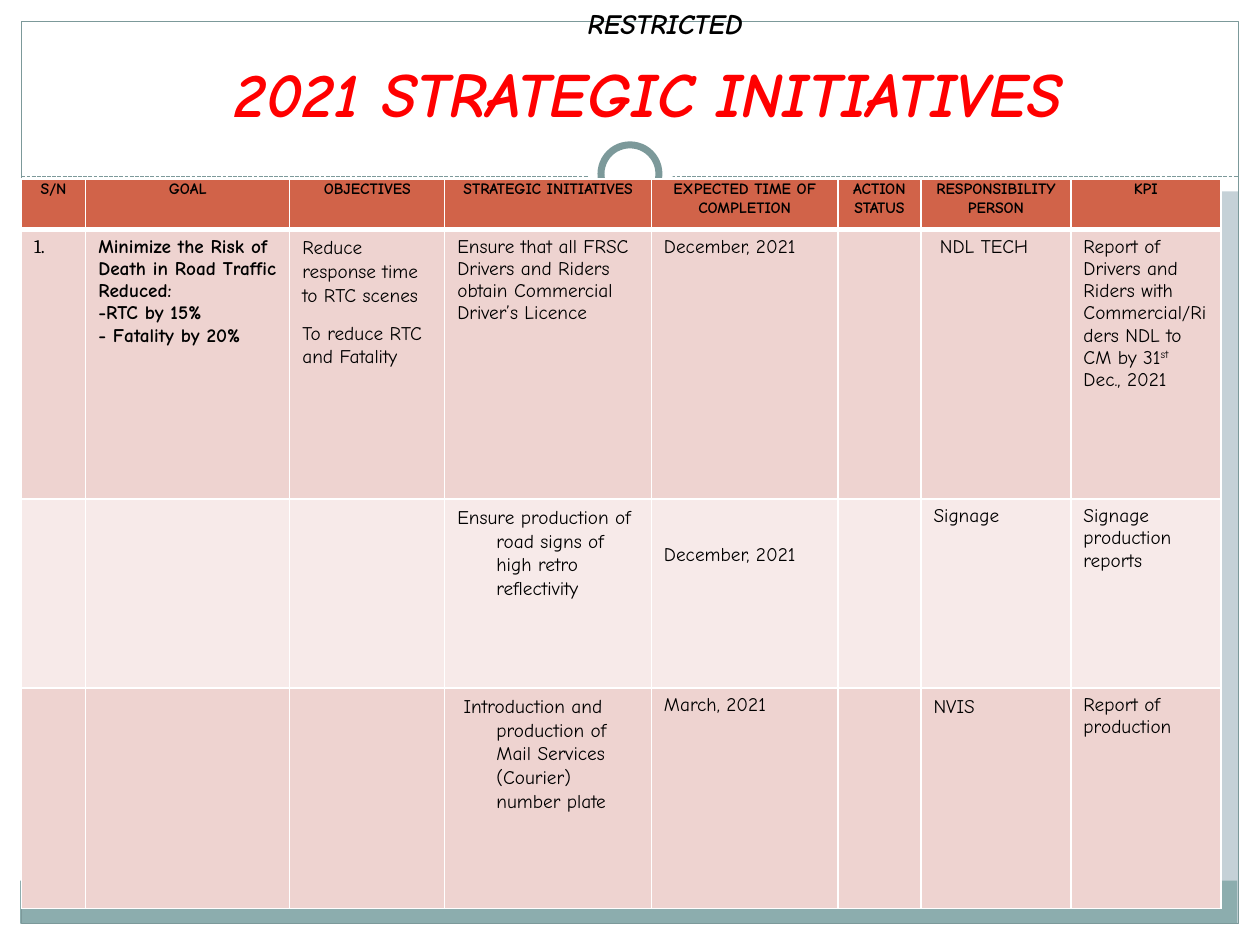
"""Build the 2021 strategic initiatives table slide."""
import pptx
import pptx.dml.color
import pptx.enum.dml
import pptx.enum.shapes
import pptx.enum.text
import pptx.oxml
import pptx.oxml.ns
import pptx.util

Inches = pptx.util.Inches
Pt = pptx.util.Pt
RGBColor = pptx.dml.color.RGBColor
Shape = pptx.enum.shapes.MSO_SHAPE
Align = pptx.enum.text.PP_ALIGN

WHITE = RGBColor(0xFF, 0xFF, 0xFF)
BLACK = RGBColor(0, 0, 0)
RED = RGBColor(0xFF, 0, 0)
BACKDROP = RGBColor(0xC5, 0xD1, 0xD7)
TEAL = RGBColor(0x8C, 0xAD, 0xAE)
FRAME = RGBColor(0x7C, 0x99, 0x9A)
HEADER = RGBColor(0xD1, 0x63, 0x49)
ROSE = RGBColor(0xEE, 0xD3, 0xD0)
PALE = RGBColor(0xF7, 0xEA, 0xE9)
FONT = "Comic Neue"

TITLE = "2021 STRATEGIC INITIATIVES"
MARKING = "RESTRICTED"
BANDS = [
    ((0, 7.33, 10, 0.17), WHITE),
    ((0, 0, 10, 1.52), WHITE),
    ((0, 0, 0.17, 7.5), WHITE),
    ((9.83, 0, 0.17, 7.5), WHITE),
    ((0.16, 6.99, 9.66, 0.34), TEAL),
]
COLUMN_WIDTHS = [0.51, 1.62, 1.23, 1.64, 1.48, 0.66, 1.19, 1.19]
ROW_HEIGHTS = [0.4, 2.14, 1.5, 1.75]
HEADINGS = [
    "S/N", "GOAL", "OBJECTIVES", "STRATEGIC INITIATIVES",
    "EXPECTED TIME OF COMPLETION", "ACTION STATUS",
    "RESPONSIBILITY PERSON", "KPI",
]
BODY = [
    [
        ["1."],
        ["Minimize the Risk of Death in Road Traffic", "Reduced:",
         "-RTC by 15%", "- Fatality by 20%"],
        ["Reduce response time to RTC scenes", "To reduce RTC and Fatality"],
        ["Ensure that all FRSC Drivers and Riders obtain Commercial Driver’s Licence"],
        ["December, 2021"],
        [],
        ["NDL TECH"],
        [("Report of Drivers and Riders with Commercial/Riders NDL to CM by 31",
          "st", " Dec., 2021")],
    ],
    [
        [], [], [],
        ["Ensure production of road signs of high retro reflectivity"],
        ["December, 2021"], [], ["Signage"], ["Signage production reports"],
    ],
    [
        [], [], [],
        ["Introduction and production of Mail Services (Courier) number plate"],
        ["March, 2021"], [], ["NVIS"], ["Report of production"],
    ],
]
SPACED_CELLS = {(1, 2), (2, 3), (2, 4), (3, 3), (3, 6)}
HANGING_INDENTS = {(2, 3): -0.31, (3, 3): -0.26}


def add_span(para, text, size, bold=False, italic=False, color=BLACK, font=FONT):
    span = para.add_run()
    span.text = text
    span.font.name = font
    span.font.size = Pt(size)
    span.font.bold = bold
    span.font.italic = italic
    span.font.color.rgb = color
    return span


def add_plain_shape(page, kind, place, fill=None, line_width=None):
    shape = page.shapes.add_shape(kind, *map(Inches, place))
    shape.shadow.inherit = False
    if fill is None:
        shape.fill.background()
    else:
        shape.fill.solid()
        shape.fill.fore_color.rgb = fill
    if line_width is None:
        shape.line.fill.background()
    else:
        shape.line.color.rgb = FRAME
        shape.line.width = Pt(line_width)


def add_backdrop(page):
    page.background.fill.solid()
    page.background.fill.fore_color.rgb = BACKDROP
    for place, fill in BANDS:
        add_plain_shape(page, Shape.RECTANGLE, place, fill)
    add_plain_shape(page, Shape.RECTANGLE, (0.17, 0.17, 9.66, 7.16), line_width=0.75)
    divider = page.shapes.add_connector(
        pptx.enum.shapes.MSO_CONNECTOR.STRAIGHT,
        Inches(0.17), Inches(1.4), Inches(9.83), Inches(1.4))
    divider.line.color.rgb = FRAME
    divider.line.width = Pt(0.75)
    divider.line.dash_style = pptx.enum.dml.MSO_LINE.SQUARE_DOT
    properties = divider.element.find(pptx.oxml.ns.qn("p:spPr"))
    properties.append(pptx.oxml.parse_xml(
        f"<a:effectLst {pptx.oxml.ns.nsdecls('a')}/>"))
    add_plain_shape(page, Shape.OVAL, (4.67, 1.05, 0.67, 0.67), WHITE)
    add_plain_shape(page, Shape.OVAL, (4.77, 1.15, 0.46, 0.46), WHITE, 4)


def add_title(page):
    title = page.shapes.title
    page.shapes.element.append(title.element)
    title.left, title.top, title.width, title.height = map(
        Inches, (0.33, 0.25, 9.33, 0.83))
    frame = title.text_frame
    frame.auto_size = pptx.enum.text.MSO_AUTO_SIZE.NONE
    frame.vertical_anchor = pptx.enum.text.MSO_ANCHOR.BOTTOM
    frame.margin_left = Inches(0.4)
    para = frame.paragraphs[0]
    para.alignment = Align.CENTER
    add_span(para, TITLE, 36, True, True, RED)


def style_cell(cell, fill, top, bottom):
    cell.fill.solid()
    cell.fill.fore_color.rgb = fill
    properties = cell._tc.get_or_add_tcPr()
    borders = [("lnL", 1), ("lnR", 1), ("lnT", top), ("lnB", bottom)]
    for position, (edge, width) in enumerate(borders):
        properties.insert(position, pptx.oxml.parse_xml(
            f'<a:{edge} {pptx.oxml.ns.nsdecls("a")} w="{Pt(width)}">'
            f'<a:solidFill><a:srgbClr val="{WHITE}"/></a:solidFill></a:{edge}>'))


def space_out(para):
    para.line_spacing = 1.07
    para.space_after = Pt(8)


def fill_header(cell, heading):
    style_cell(cell, HEADER, 1, 3)
    cell.margin_left = cell.margin_right = Inches(0.02)
    cell.margin_top = cell.margin_bottom = 0
    para = cell.text_frame.paragraphs[0]
    para.alignment = Align.CENTER
    space_out(para)
    add_span(para, heading, 9, bold=True)


def fill_body(cell, place, lines):
    row, column = place
    style_cell(cell, ROSE if row % 2 else PALE, 3 if row == 1 else 1, 1)
    frame = cell.text_frame
    for number, line in enumerate(lines):
        para = frame.add_paragraph() if number else frame.paragraphs[0]
        if place in SPACED_CELLS:
            space_out(para)
        if place in HANGING_INDENTS:
            settings = para._p.get_or_add_pPr()
            settings.set("marL", str(Inches(0.31)))
            settings.set("indent", str(Inches(HANGING_INDENTS[place])))
        pieces = (line,) if isinstance(line, str) else line
        for piece in pieces:
            span = add_span(para, piece, 11, bold=column == 1,
                            font=FONT if column else "Cambria")
            if piece == "st":
                span._r.get_or_add_rPr().set("baseline", "30000")


def add_initiatives(page):
    table = page.shapes.add_table(
        len(ROW_HEIGHTS), len(COLUMN_WIDTHS), Inches(0.17), Inches(1.42),
        Inches(sum(COLUMN_WIDTHS)), Inches(sum(ROW_HEIGHTS))).table
    for column, width in zip(table.columns, COLUMN_WIDTHS):
        column.width = Inches(width)
    for row, height in zip(table.rows, ROW_HEIGHTS):
        row.height = Inches(height)
    for column, heading in enumerate(HEADINGS):
        fill_header(table.cell(0, column), heading)
    for row, entries in enumerate(BODY, 1):
        for column, lines in enumerate(entries):
            fill_body(table.cell(row, column), (row, column), lines)
    table.cell(2, 4).margin_top = Inches(0.35)
    table.cell(1, 6).margin_left = Inches(0.15)


def add_marking(page):
    box = page.shapes.add_textbox(*map(Inches, (0.71, 0, 9.14, 0.63)))
    box.text_frame.word_wrap = True
    para = box.text_frame.paragraphs[0]
    para.alignment = Align.CENTER
    para.space_before = Pt(2)
    add_span(para, MARKING, 16, True, True)


def main():
    deck = pptx.Presentation()
    deck.slide_width, deck.slide_height = Inches(10), Inches(7.5)
    page = deck.slides.add_slide(deck.slide_layouts[5])
    for add_part in (add_backdrop, add_title, add_initiatives, add_marking):
        add_part(page)
    deck.save("out.pptx")


if __name__ == "__main__":
    main()
